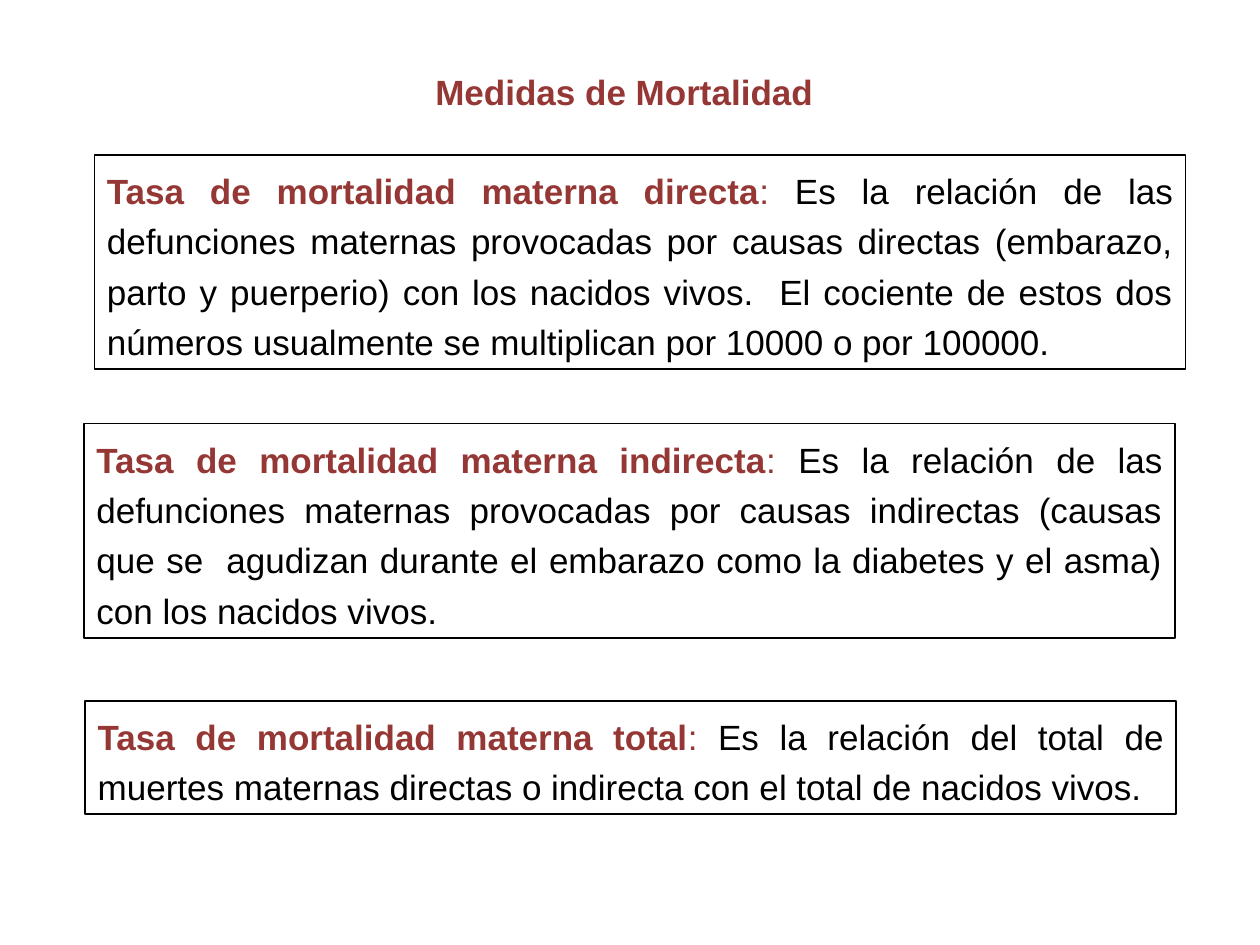
import pptx
import pptx.util
import pptx.dml.color
import pptx.enum.shapes
import pptx.enum.text

Pt = pptx.util.Pt
ALIGN = pptx.enum.text.PP_ALIGN
COLORS = {"term": "953735", "body": "000000", "border": "000000"}
FRAME_FORMAT = {
    "word_wrap": True,
    "auto_size": pptx.enum.text.MSO_AUTO_SIZE.SHAPE_TO_FIT_TEXT,
    "vertical_anchor": pptx.enum.text.MSO_ANCHOR.TOP,
    "margin_left": Pt(7.2),
    "margin_right": Pt(7.2),
    "margin_top": Pt(3.6),
    "margin_bottom": Pt(3.6),
}
FONT_FORMAT = {"name": "Arial", "size": Pt(20)}
HEADING_FORMAT = {"alignment": ALIGN.CENTER, "space_before": Pt(12.5), "line_spacing": 1.0}
DEFINITION_FORMAT = {"alignment": ALIGN.JUSTIFY, "space_before": Pt(12.5), "line_spacing": 1.2}
BOX_WIDTH = 623.5

DEFINITIONS = [
    (54, 88.5, 122.5, "Tasa de mortalidad materna directa", ": ",
     "Es la relación de las defunciones maternas provocadas por causas directas "
     "(embarazo, parto y puerperio) con los nacidos vivos.  El cociente de estos dos "
     "números usualmente se multiplican por 10000 o por 100000. "),
    (48, 242, 122.5, "Tasa de mortalidad materna indirecta", ": ",
     "Es la relación de las defunciones maternas provocadas por causas indirectas "
     "(causas que se  agudizan durante el embarazo como la diabetes y el asma) "
     "con los nacidos vivos. "),
    (48.75, 400.5, 64.5, "Tasa de mortalidad materna total", ":",
     " Es la relación del total de muertes maternas directas o indirecta "
     "con el total de nacidos vivos. "),
]


def rgb(role):
    return pptx.dml.color.RGBColor.from_string(COLORS[role])


def apply_format(target, values):
    for attribute, value in values.items():
        setattr(target, attribute, value)


def write_runs(frame, paragraph_format, pieces):
    apply_format(frame, FRAME_FORMAT)
    paragraph = frame.paragraphs[0]
    apply_format(paragraph, paragraph_format)
    for wording, role, bold in pieces:
        run = paragraph.add_run()
        run.text = wording
        apply_format(run.font, {**FONT_FORMAT, "bold": bold})
        run.font.color.rgb = rgb(role)


def add_heading(slide, wording):
    heading = slide.shapes.title
    place = {"left": Pt(70.5), "top": Pt(36.75), "width": Pt(572.5), "height": Pt(31.5)}
    apply_format(heading, place)
    write_runs(heading.text_frame, HEADING_FORMAT, [(wording, "term", True)])


def add_definition(slide, left, top, height, term, separator, meaning):
    definition = slide.shapes.add_shape(
        pptx.enum.shapes.MSO_SHAPE.RECTANGLE, Pt(left), Pt(top), Pt(BOX_WIDTH), Pt(height))
    definition.shadow.inherit = False
    definition.fill.background()
    definition.line.color.rgb = rgb("border")
    definition.line.width = Pt(1)
    write_runs(definition.text_frame, DEFINITION_FORMAT, [
        (term, "term", True), (separator, "term", False), (meaning, "body", False)])


def main():
    presentation = pptx.Presentation()
    apply_format(presentation, {"slide_width": Pt(720), "slide_height": Pt(540)})
    slide = presentation.slides.add_slide(presentation.slide_layouts.get_by_name("Title Only"))
    add_heading(slide, "Medidas de Mortalidad")
    for definition in DEFINITIONS:
        add_definition(slide, *definition)
    presentation.save("out.pptx")


if __name__ == "__main__":
    main()
